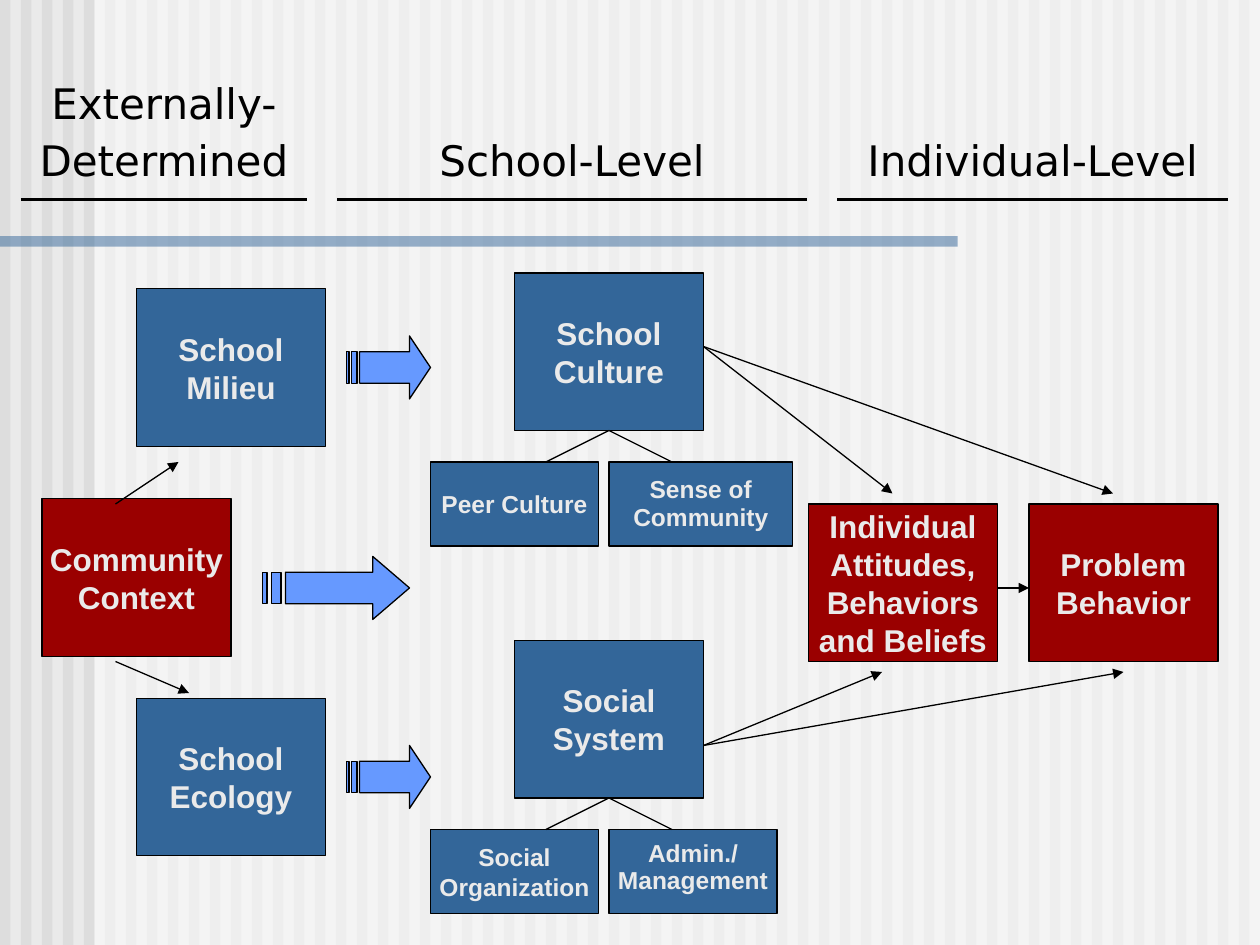
from typing import NamedTuple

import pptx
import pptx.dml.color
import pptx.enum.shapes
import pptx.enum.text
import pptx.oxml
import pptx.oxml.ns
import pptx.util

Pt = pptx.util.Pt
qn = pptx.oxml.ns.qn
SHAPE = pptx.enum.shapes.MSO_SHAPE
ANCHOR = pptx.enum.text.MSO_ANCHOR
CENTER = pptx.enum.text.PP_ALIGN.CENTER
NS = 'xmlns:a="http://schemas.openxmlformats.org/drawingml/2006/main"'

BLACK, WHITE, PALE, STRIPE = "000000", "FFFFFF", "EAEAEA", "DDDDDD"
BLUE, RED, ARROW_BLUE = "336699", "9A0000", "6699FF"


class Box(NamedTuple):
    text: str
    x: float
    y: float
    w: float = 108
    h: float = 90
    color: str = BLUE
    size: float = 18
    spacing: float = 1


class Link(NamedTuple):
    x1: float
    y1: float
    x2: float
    y2: float
    arrow: bool = True


class BlockArrow(NamedTuple):
    x: float
    y: float
    w: float
    h: float = 36


class Heading(NamedTuple):
    text: str
    w: float


BOXES = [
    Box("School Milieu", 78, 165),
    Box("School Ecology", 78, 399),
    Box("Community Context", 24, 285, color=RED),
    Box("Social System", 294, 366),
    Box("School Culture", 294, 156),
    Box("Problem Behavior", 588, 288, color=RED),
    Box("Individual Attitudes, Behaviors and Beliefs", 462, 288, color=RED),
    Box("Social Organization", 246, 474, 96, 48, size=14),
    Box("Admin./\nManagement", 348, 474, 96, 48, size=14, spacing=0.5),
    Box("Peer Culture", 246, 264, 96, 48, size=14),
    Box("Sense of Community", 348, 264, 105, 48, size=14, spacing=0.95),
]
LINKS = [
    Link(66, 288, 102, 264),
    Link(66, 378, 108, 396),
    *(Link(348, y, x, y + 18, False) for y in (456, 246) for x in (312, 384)),
    Link(402, 198, 510, 282),
    Link(402, 198, 636, 282),
    Link(402, 426, 642, 384),
    Link(402, 426, 504, 384),
    Link(570, 336, 588, 336),
]
BLOCK_ARROWS = [
    BlockArrow(198, 192, 48),
    BlockArrow(150, 318, 84),
    BlockArrow(198, 426, 48),
]
HEADINGS = [
    Heading("Externally-\nDetermined", 163.4),
    Heading("", 16.6),
    Heading("School-Level", 268.6),
    Heading("", 16.6),
    Heading("Individual-Level", 223.4),
]
ARROW_OUTLINES = [
    [(24, 0), (24, 8), (5, 8), (5, 24), (24, 24), (24, 32), (32, 16)],
    [(2, 8), (2, 24), (4, 24), (4, 8)],
    [(0, 8), (0, 24), (1, 24), (1, 8)],
]


def rgb(color: str) -> pptx.dml.color.RGBColor:
    return pptx.dml.color.RGBColor.from_string(color)


def paint(sp, color: str) -> None:
    sp.shadow.inherit = False
    sp.fill.solid()
    sp.fill.fore_color.rgb = rgb(color)


def outline(line, color: str = BLACK, width: float = 0.75) -> None:
    line.color.rgb = rgb(color)
    line.width = Pt(width)


def add_rect(slide, x: float, y: float, w: float, h: float, color: str):
    sp = slide.shapes.add_shape(SHAPE.RECTANGLE, Pt(x), Pt(y), Pt(w), Pt(h))
    paint(sp, color)
    sp.line.fill.background()
    return sp


def make_half_clear(sp) -> None:
    clr = next(sp._element.spPr.iter(qn("a:srgbClr")))
    clr.append(pptx.oxml.parse_xml(f'<a:alpha {NS} val="50000"/>'))


def write(tf, text: str, font: str, size: float, color: str, gap: float,
          bold: bool = False, spacing: float = 1) -> None:
    for i, line in enumerate(text.split("\n")):
        p = tf.add_paragraph() if i else tf.paragraphs[0]
        p.text = line
        p.alignment = CENTER
        p.line_spacing = spacing
        p.space_before = Pt(gap if i else 0)
        p.font.name = font
        p.font.size = Pt(size)
        p.font.bold = bold
        p.font.color.rgb = rgb(color)


def draw_background(slide) -> None:
    fill = slide.background.fill
    fill.solid()
    fill.fore_color.rgb = rgb(PALE)
    for i in range(60):
        add_rect(slide, 12 * i, 0, 6, 540, STRIPE)
    make_half_clear(add_rect(slide, 54, 0, 666, 540, WHITE))
    make_half_clear(add_rect(slide, 0, 135, 547.2, 6, BLUE))


def draw_box(slide, box: Box) -> None:
    sp = add_rect(slide, box.x, box.y, box.w, box.h, box.color)
    outline(sp.line)
    tf = sp.text_frame
    tf.word_wrap = True
    tf.vertical_anchor = ANCHOR.MIDDLE
    tf.margin_left = tf.margin_right = tf.margin_top = tf.margin_bottom = Pt(3.6)
    write(tf, box.text, "Arial", box.size, PALE, box.size / 2, True, box.spacing)


def draw_link(slide, link: Link) -> None:
    ends = (Pt(v) for v in link[:4])
    sp = slide.shapes.add_connector(pptx.enum.shapes.MSO_CONNECTOR.STRAIGHT, *ends)
    outline(sp.line)
    if link.arrow:
        sp.line._get_or_add_ln().append(
            pptx.oxml.parse_xml(f'<a:tailEnd {NS} type="triangle"/>'))
    sp._element.spPr.append(pptx.oxml.parse_xml(f"<a:effectLst {NS}/>"))


def draw_block_arrow(slide, arrow: BlockArrow) -> None:
    builder = None
    for points in ARROW_OUTLINES:
        start, *rest = [(Pt(arrow.x + arrow.w * u / 32), Pt(arrow.y + arrow.h * v / 32))
                        for u, v in points]
        if builder is None:
            builder = slide.shapes.build_freeform(*start)
        else:
            builder.move_to(*start)
        builder.add_line_segments(rest, close=True)
    sp = builder.convert_to_shape()
    paint(sp, ARROW_BLUE)
    outline(sp.line)


def set_borders(cell, underlined: bool) -> None:
    tcPr = cell._tc.get_or_add_tcPr()
    solid = f'<a:solidFill><a:srgbClr val="{BLACK}"/></a:solidFill>'
    for side in "LRTB":
        fill = solid if underlined and side == "B" else "<a:noFill/>"
        tcPr.append(pptx.oxml.parse_xml(
            f'<a:ln{side} {NS} w="{Pt(2.25)}">{fill}</a:ln{side}>'))


def draw_headings(slide) -> None:
    width = sum(h.w for h in HEADINGS)
    frame = slide.shapes.add_table(1, len(HEADINGS), Pt(12), Pt(42), Pt(width), Pt(72))
    table = frame.table
    table.first_row = table.horz_banding = False
    for i, heading in enumerate(HEADINGS):
        table.columns[i].width = Pt(heading.w)
        cell = table.cell(0, i)
        set_borders(cell, bool(heading.text))
        cell.fill.background()
        cell.vertical_anchor = ANCHOR.BOTTOM
        cell.margin_top, cell.margin_bottom = Pt(0), Pt(7.5)
        write(cell.text_frame, heading.text, "DejaVu Sans", 24, BLACK, 4.8)


def main() -> None:
    prs = pptx.Presentation()
    prs.slide_width, prs.slide_height = Pt(720), Pt(540)
    slide = prs.slides.add_slide(prs.slide_layouts[6])
    draw_background(slide)
    for box in BOXES:
        draw_box(slide, box)
    for link in LINKS:
        draw_link(slide, link)
    for arrow in BLOCK_ARROWS:
        draw_block_arrow(slide, arrow)
    draw_headings(slide)
    prs.save("out.pptx")


if __name__ == "__main__":
    main()
